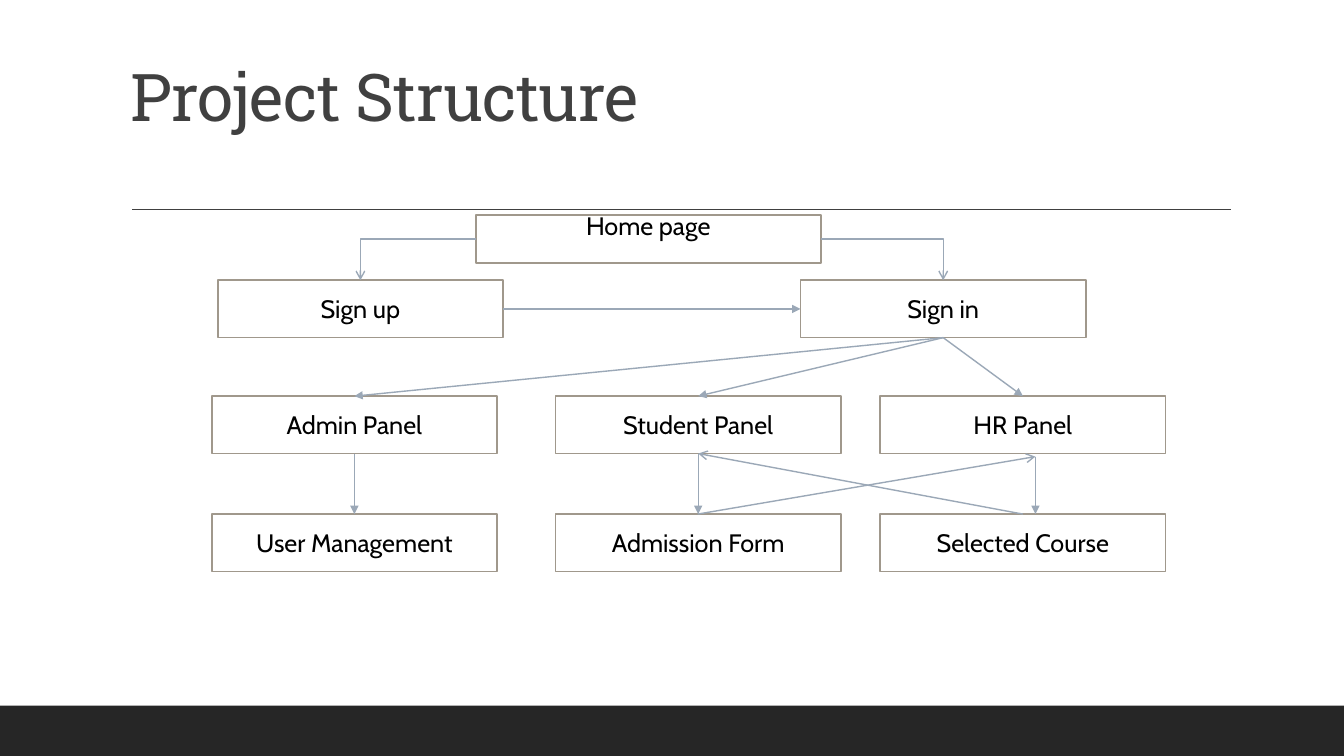
from dataclasses import dataclass

from lxml.etree import SubElement
from pptx import Presentation
from pptx.dml.color import RGBColor
from pptx.enum.shapes import MSO_CONNECTOR, MSO_SHAPE
from pptx.enum.text import MSO_ANCHOR, PP_ALIGN
from pptx.oxml.ns import qn
from pptx.shapes.autoshape import Shape
from pptx.shapes.connector import Connector
from pptx.slide import Slide
from pptx.text.text import TextFrame
from pptx.util import Inches, Pt


@dataclass(frozen=True)
class Theme:
    white: str = "FFFFFF"
    black: str = "000000"
    dark: str = "404040"
    band: str = "262626"
    edge: str = "A0988C"
    arrow: str = "9BA8B7"
    head: str = "Roboto Slab"
    body: str = "Cabin"
    big: float = 47
    small: float = 18
    rim: float = 1.25
    thin: float = 1


@dataclass(frozen=True)
class Box:
    text: str
    left: float
    top: float
    width: float = 2.83
    height: float = 0.57
    lift: float = 0.05


@dataclass(frozen=True)
class Link:
    start: str
    out: int
    end: str
    into: int
    tip: str = "triangle"
    bent: bool = False


@dataclass(frozen=True)
class Line:
    left: float
    top: float
    right: float
    low: float
    tip: str


THEME = Theme()
TOP, LEFT, BOTTOM, RIGHT = range(4)
COLUMNS = (2.1, 5.51, 8.73)
PANELS = ("Admin Panel", "Student Panel", "HR Panel")
PAGES = ("User Management", "Admission Form", "Selected Course")

BOXES = [
    Box("Home page", 4.72, 2.13, 3.42, 0.48, 0.31),
    Box("Sign up", 2.16, 2.78),
    Box("Sign in", 7.94, 2.78),
    *(Box(text, left, top)
      for top, row in ((3.93, PANELS), (5.1, PAGES))
      for text, left in zip(row, COLUMNS)),
]

LINKS = [
    Link("Home page", LEFT, "Sign up", TOP, "arrow", True),
    Link("Home page", RIGHT, "Sign in", TOP, "arrow", True),
    Link("Sign up", RIGHT, "Sign in", LEFT),
    *(Link("Sign in", BOTTOM, panel, TOP) for panel in PANELS),
    *(Link(panel, BOTTOM, page, TOP) for panel, page in zip(PANELS[:2], PAGES)),
    Link("Selected Course", TOP, "Student Panel", BOTTOM, "arrow"),
]

LINES = [
    Line(10.27, 4.53, 10.27, 5.1, "triangle"),
    Line(6.92, 5.1, 10.27, 4.53, "arrow"),
]


def paint(shape: Shape, fill: str) -> None:
    shape.shadow.inherit = False
    shape.fill.solid()
    shape.fill.fore_color.rgb = RGBColor.from_string(fill)


def write(frame: TextFrame, text: str, face: str, size: float, color: str,
          align: PP_ALIGN, track: int = 0) -> None:
    frame.word_wrap = True
    para = frame.paragraphs[0]
    para.alignment = align
    run = para.add_run()
    run.text = text
    run.font.name = face
    run.font.size = Pt(size)
    run.font.color.rgb = RGBColor.from_string(color)
    if track:
        para.line_spacing = 0.9
        run.font._element.set("spc", str(track))


def style(wire: Connector, color: str, tip: str = "") -> None:
    wire.line.color.rgb = RGBColor.from_string(color)
    wire.line.width = Pt(THEME.thin)
    if tip:
        SubElement(wire.line._get_or_add_ln(), qn("a:tailEnd"), type=tip)
    SubElement(wire._element.spPr, qn("a:effectLst"))


def draw_line(slide: Slide, line: Line, color: str) -> None:
    ends = [Inches(at) for at in (line.left, line.top, line.right, line.low)]
    wire = slide.shapes.add_connector(MSO_CONNECTOR.STRAIGHT, *ends)
    style(wire, color, line.tip)


def draw_box(slide: Slide, box: Box) -> Shape:
    shape = slide.shapes.add_shape(
        MSO_SHAPE.RECTANGLE, Inches(box.left), Inches(box.top),
        Inches(box.width), Inches(box.height))
    paint(shape, THEME.white)
    shape.line.color.rgb = RGBColor.from_string(THEME.edge)
    shape.line.width = Pt(THEME.rim)
    frame = shape.text_frame
    frame.vertical_anchor = MSO_ANCHOR.MIDDLE
    frame.margin_bottom = Inches(box.lift)
    write(frame, box.text, THEME.body, THEME.small, THEME.black, PP_ALIGN.CENTER)
    return shape


def draw_link(slide: Slide, link: Link, nodes: dict[str, Shape]) -> None:
    kind = MSO_CONNECTOR.ELBOW if link.bent else MSO_CONNECTOR.STRAIGHT
    wire = slide.shapes.add_connector(kind, 0, 0, 0, 0)
    wire.begin_connect(nodes[link.start], link.out)
    wire.end_connect(nodes[link.end], link.into)
    if link.bent:
        wire._element.spPr.find(qn("a:prstGeom")).set("prst", "bentConnector2")
    style(wire, THEME.arrow, link.tip)


def draw_frame(slide: Slide) -> None:
    band = slide.shapes.add_shape(
        MSO_SHAPE.RECTANGLE, 0, Inches(7), Inches(13.33), Inches(0.5))
    paint(band, THEME.band)
    band.line.fill.background()
    draw_line(slide, Line(1.31, 2.08, 12.21, 2.08, ""), THEME.dark)
    title = slide.shapes.add_textbox(
        Inches(1.2), Inches(0.29), Inches(11), Inches(1.11))
    title.text_frame.vertical_anchor = MSO_ANCHOR.BOTTOM
    write(title.text_frame, "Project Structure", THEME.head, THEME.big,
          THEME.dark, PP_ALIGN.LEFT, -50)


def main() -> None:
    deck = Presentation()
    deck.slide_width = Inches(13.33)
    deck.slide_height = Inches(7.5)
    slide = deck.slides.add_slide(deck.slide_layouts[6])
    draw_frame(slide)
    nodes = {box.text: draw_box(slide, box) for box in BOXES}
    for link in LINKS:
        draw_link(slide, link, nodes)
    for line in LINES:
        draw_line(slide, line, THEME.arrow)
    deck.save("out.pptx")


if __name__ == "__main__":
    main()
